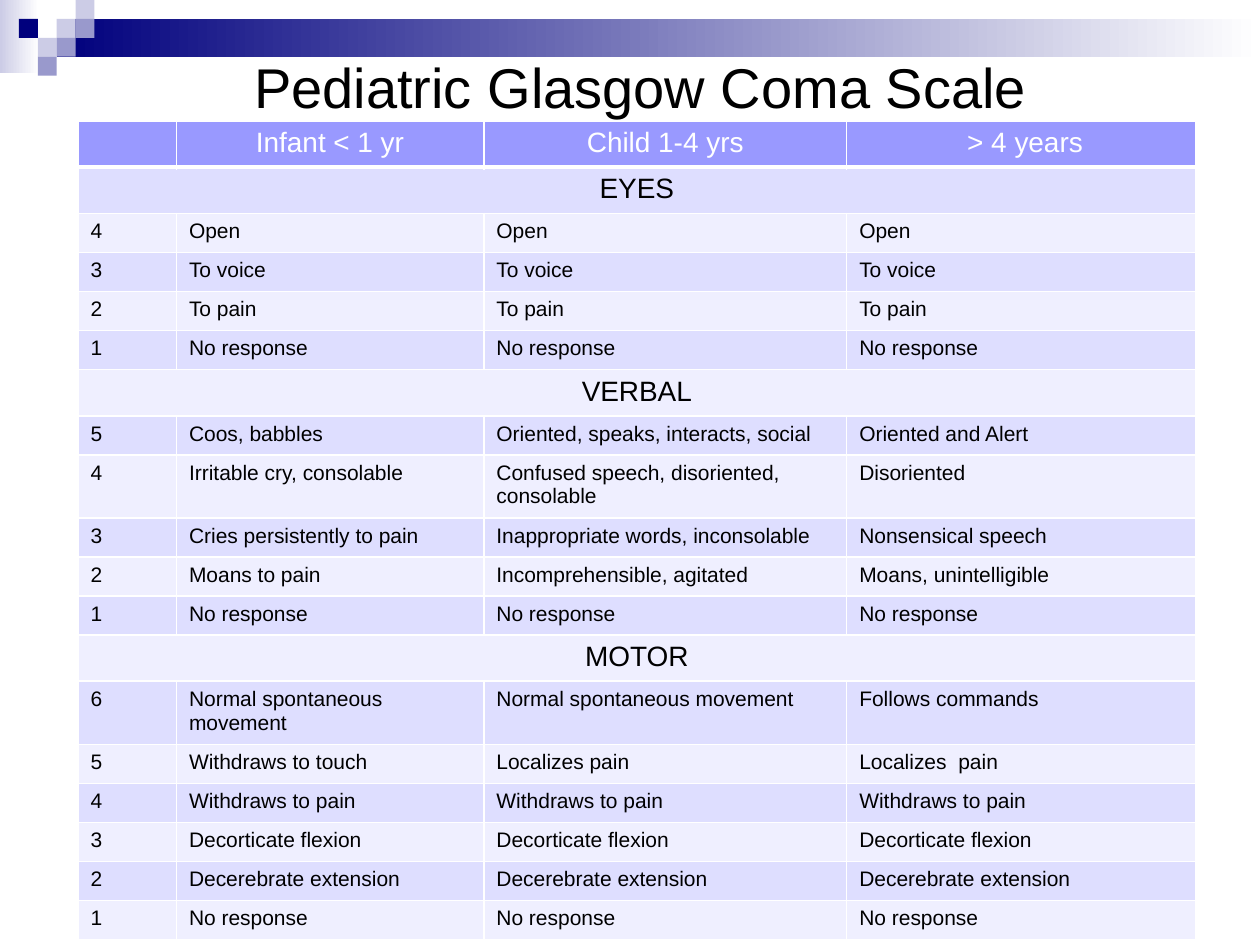
from lxml.etree import SubElement
from pptx import Presentation
from pptx.dml.color import RGBColor
from pptx.enum.shapes import MSO_SHAPE as Shape
from pptx.enum.text import MSO_ANCHOR as Anchor, PP_ALIGN as Align
from pptx.oxml.ns import qn
from pptx.util import Inches, Pt

WIDTH, HEIGHT = 10, 7.5
UNIT = 0.15  # side of one square in the corner pattern
NAVY, VIOLET, LILAC = "00007D", "9999CC", "CCCCE6"
WHITE, BLACK = "FFFFFF", "000000"
HEADER_FILL, BANDS = "9999FF", ("DEDEFF", "EFEFFF")

# Squares as (column, row, colour) on the corner grid
SQUARES = [
    (3, 1, LILAC), (4, 0, LILAC), (4, 1, VIOLET), (2, 2, LILAC),
    (1, 1, NAVY), (3, 2, VIOLET), (2, 3, VIOLET),
]

COLUMN_WIDTHS = (0.78, 2.44, 2.88, 2.77)
HEADING_HEIGHT, LINE_HEIGHT, TWO_LINE_HEIGHT = 0.36, 0.31, 0.49
HEADER = ("", "Infant < 1 yr", "Child 1-4 yrs", " > 4 years")

# Each section lists its responses from the highest score down to 1
SECTIONS = {
    "EYES": [
        ("Open",) * 3,
        ("To voice",) * 3,
        ("To pain",) * 3,
        ("No response",) * 3,
    ],
    "VERBAL": [
        ("Coos, babbles", "Oriented, speaks, interacts, social", "Oriented and Alert"),
        ("Irritable cry, consolable", "Confused speech, disoriented, consolable", "Disoriented"),
        ("Cries persistently to pain", "Inappropriate words, inconsolable", "Nonsensical speech"),
        ("Moans to pain", "Incomprehensible, agitated", "Moans, unintelligible"),
        ("No response",) * 3,
    ],
    "MOTOR": [
        ("Normal spontaneous movement", "Normal spontaneous movement", "Follows commands"),
        ("Withdraws to touch", "Localizes pain", "Localizes  pain"),
        ("Withdraws to pain",) * 3,
        ("Decorticate flexion",) * 3,
        ("Decerebrate extension",) * 3,
        ("No response",) * 3,
    ],
}
TWO_LINE_ROWS = {("VERBAL", 4), ("MOTOR", 6)}


def color(value):
    return RGBColor.from_string(value)


def write_text(frame, text, size=12, fill=BLACK, align=Align.LEFT):
    paragraph = frame.paragraphs[0]
    paragraph.alignment = align
    run = paragraph.add_run()
    run.text = text
    run.font.name = "Arial"
    run.font.size = Pt(size)
    run.font.color.rgb = color(fill)


def add_block(slide, left, top, width, height, fill, fade_to=None):
    """Add a plain rectangle, optionally fading from left to right."""
    block = slide.shapes.add_shape(
        Shape.RECTANGLE, Inches(left), Inches(top), Inches(width), Inches(height))
    block.shadow.inherit = False
    block.line.fill.background()
    if fade_to is None:
        block.fill.solid()
        block.fill.fore_color.rgb = color(fill)
        return
    block.fill.gradient()
    block.fill.gradient_angle = 0
    for stop, value in zip(block.fill.gradient_stops, (fill, fade_to)):
        stop.color.rgb = color(value)


def add_title(slide, text):
    box = slide.shapes.add_textbox(Inches(0.42), Inches(0.33), Inches(9.33), Inches(0.7))
    frame = box.text_frame
    frame.word_wrap = True
    frame.vertical_anchor = Anchor.MIDDLE
    write_text(frame, text, size=32, align=Align.CENTER)


def style_cell(cell, fill, bottom=1):
    """Draw white borders and a solid fill; borders come first in the XML."""
    properties = cell._tc.get_or_add_tcPr()
    for side, width in (("L", 1), ("R", 1), ("T", 1), ("B", bottom)):
        line = SubElement(properties, qn(f"a:ln{side}"), w=str(Pt(width)))
        solid = SubElement(line, qn("a:solidFill"))
        SubElement(solid, qn("a:srgbClr"), val=WHITE)
    cell.fill.solid()
    cell.fill.fore_color.rgb = color(fill)


def scale_rows():
    """Yield (texts, height, is_heading) for every row of the table."""
    yield HEADER, HEADING_HEIGHT, True
    for section, responses in SECTIONS.items():
        yield (section, "", "", ""), HEADING_HEIGHT, True
        for score, response in zip(range(len(responses), 0, -1), responses):
            tall = (section, score) in TWO_LINE_ROWS
            yield (str(score), *response), TWO_LINE_HEIGHT if tall else LINE_HEIGHT, False


def add_scale_table(slide):
    rows = list(scale_rows())
    table = slide.shapes.add_table(
        len(rows), len(COLUMN_WIDTHS), Inches(0.62), Inches(0.96),
        Inches(sum(COLUMN_WIDTHS)), Inches(sum(height for _, height, _ in rows))).table
    for column, width in zip(table.columns, COLUMN_WIDTHS):
        column.width = Inches(width)

    for index, (texts, height, is_heading) in enumerate(rows):
        is_header = index == 0
        table.rows[index].height = Inches(height)
        fill = HEADER_FILL if is_header else BANDS[(index - 1) % 2]
        for column, text in enumerate(texts):
            cell = table.cell(index, column)
            style_cell(cell, fill, bottom=3 if is_header else 1)
            if text:
                write_text(cell.text_frame, text,
                           size=16 if is_heading else 12,
                           fill=WHITE if is_header else BLACK,
                           align=Align.CENTER if is_heading else Align.LEFT)
            else:  # an empty cell must not stretch its row
                cell.margin_top = cell.margin_bottom = 0
        if is_heading and not is_header:
            table.cell(index, 0).merge(table.cell(index, len(texts) - 1))


def main():
    presentation = Presentation()
    presentation.slide_width, presentation.slide_height = Inches(WIDTH), Inches(HEIGHT)
    slide = presentation.slides.add_slide(presentation.slide_layouts[6])

    # Corner pattern and top band
    add_block(slide, 0, 0, 0.31, 0.58, LILAC, fade_to=WHITE)
    add_block(slide, 3 * UNIT, UNIT, WIDTH - 3 * UNIT, 2 * UNIT, NAVY, fade_to=WHITE)
    for column, row, fill in SQUARES:
        add_block(slide, column * UNIT, row * UNIT, UNIT, UNIT, fill)

    # Title and scale
    add_title(slide, "Pediatric Glasgow Coma Scale")
    add_scale_table(slide)
    presentation.save("out.pptx")


if __name__ == "__main__":
    main()
